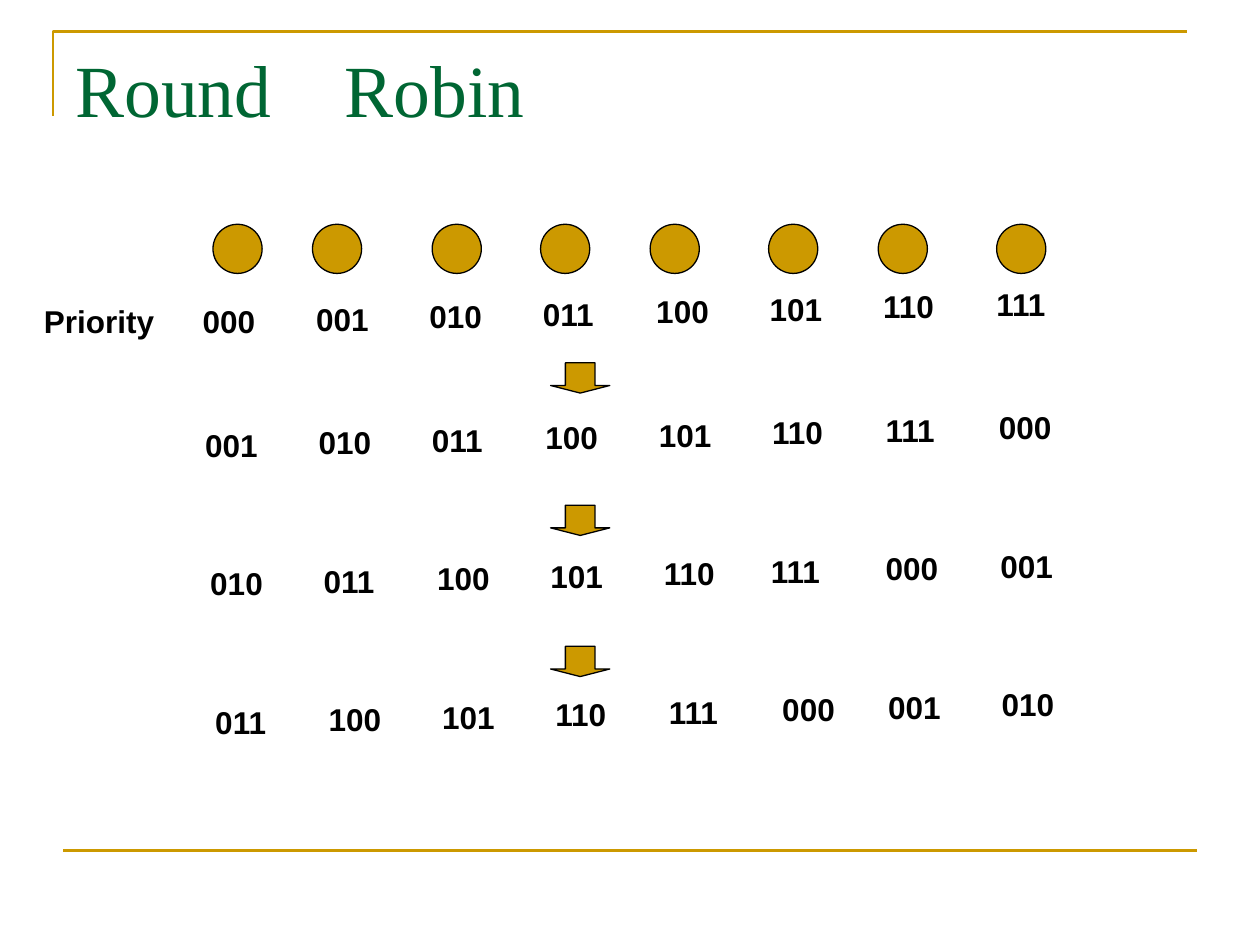
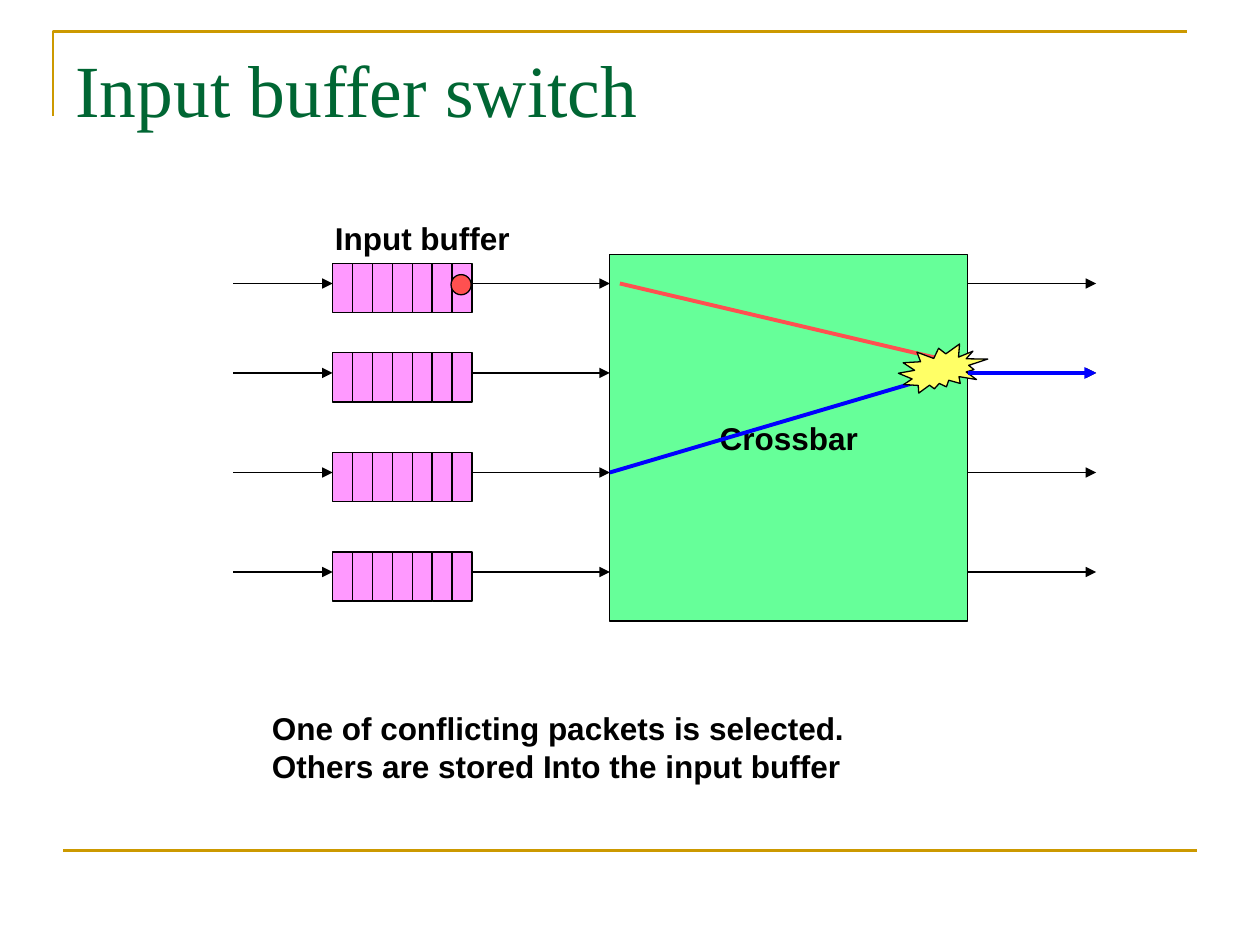
from dataclasses import dataclass

from lxml import etree
from pptx import Presentation
from pptx.dml.color import RGBColor
from pptx.enum.shapes import MSO_CONNECTOR, MSO_SHAPE
from pptx.enum.text import MSO_ANCHOR, MSO_AUTO_SIZE, PP_ALIGN
from pptx.oxml.ns import qn
from pptx.util import Inches, Pt

STRAIGHT = MSO_CONNECTOR.STRAIGHT
RECTANGLE = MSO_SHAPE.RECTANGLE
OVAL = MSO_SHAPE.OVAL
DOWN_ARROW = MSO_SHAPE.DOWN_ARROW
EXPLOSION = MSO_SHAPE.EXPLOSION2
TOP = MSO_ANCHOR.TOP
MIDDLE = MSO_ANCHOR.MIDDLE
CENTER = PP_ALIGN.CENTER
FIT_SHAPE = MSO_AUTO_SIZE.SHAPE_TO_FIT_TEXT


@dataclass(frozen=True)
class Theme:
    gold: str = "CC9900"
    title: str = "006633"
    ink: str = "000000"
    crossbar: str = "66FF99"
    buffer: str = "FF99FF"
    red: str = "FF5050"
    blue: str = "0000FF"
    burst: str = "FFFF66"
    title_font: str = "Times New Roman"
    body_font: str = "Arial"
    title_size: float = 42
    body_size: float = 18
    thin: float = 0.75
    rule: float = 1.5
    thick: float = 2.25


THEME = Theme()

NODE_LEFTS = [1.69, 2.48, 3.43, 4.29, 5.16, 6.1, 6.97, 7.91]
LABEL_PITCH = 0.9
LABEL_RISE = 0.02
PRIORITY_ROWS = [
    (1.51, 2.35, {}),
    (1.53, 3.33, {}),
    (1.57, 4.43, {5: -0.05, 6: -0.04, 7: -0.03}),
    (1.61, 5.53, {6: -0.06, 7: -0.06}),
]
ARROW_TOPS = [2.88, 4.01, 5.13]

LANES = [2.25, 2.96, 3.75, 4.54]
CELL_COUNT = 7
CELL_WIDTH = 0.158
CELL_HEIGHT = 0.39
BUFFER_LEFT = 2.64
BUFFER_RIGHT = 3.74
CROSSBAR_LEFT = 4.84
CROSSBAR_RIGHT = 7.68
INPUT_START = 1.85
OUTPUT_END = 8.7


def color(value):
    return RGBColor.from_string(value)


def set_font(paragraphs, name, size, ink, bold=False):
    for para in paragraphs:
        para.font.name = name
        para.font.size = Pt(size)
        para.font.color.rgb = color(ink)
        para.font.bold = bold


def add_line(page, start, end, ink=THEME.ink, width=THEME.thin, arrow=True):
    line = page.shapes.add_connector(STRAIGHT, *map(Inches, start + end))
    line.line.color.rgb = color(ink)
    line.line.width = Pt(width)
    if arrow:
        tail = etree.SubElement(line.line._get_or_add_ln(), qn("a:tailEnd"))
        tail.set("type", "triangle")
    etree.SubElement(line._element.spPr, qn("a:effectLst"))


def add_figure(page, kind, left, top, width, height, fill):
    figure = page.shapes.add_shape(kind, *map(Inches, (left, top, width, height)))
    figure.shadow.inherit = False
    figure.fill.solid()
    figure.fill.fore_color.rgb = color(fill)
    figure.line.color.rgb = color(THEME.ink)
    figure.line.width = Pt(THEME.thin)
    return figure


def add_label(page, text, left, top, width, height=0.4):
    box = page.shapes.add_textbox(*map(Inches, (left, top, width, height)))
    frame = box.text_frame
    frame.text = text
    frame.word_wrap = False
    frame.auto_size = FIT_SHAPE
    set_font(frame.paragraphs, THEME.body_font, THEME.body_size, THEME.ink, True)


def add_page(deck, title):
    page = deck.slides.add_slide(deck.slide_layouts[6])
    builder = page.shapes.build_freeform(Inches(0.42), Inches(0.92))
    corner = [(Inches(0.42), Inches(0.25)), (Inches(9.42), Inches(0.25))]
    builder.add_line_segments(corner, close=False)
    bracket = builder.convert_to_shape()
    bracket.shadow.inherit = False
    bracket.fill.background()
    bracket.line.color.rgb = color(THEME.gold)
    bracket.line.width = Pt(THEME.rule)
    add_line(page, (0.5, 6.75), (9.5, 6.75), THEME.gold, THEME.rule, arrow=False)

    box = page.shapes.add_textbox(Inches(0.5), Inches(0.3), Inches(9), Inches(1.25))
    frame = box.text_frame
    frame.word_wrap = True
    frame.vertical_anchor = TOP
    frame.text = title
    set_font(frame.paragraphs, THEME.title_font, THEME.title_size, THEME.title)
    return page


def add_buffer(page, lane):
    for cell in range(CELL_COUNT):
        left = BUFFER_LEFT + cell * CELL_WIDTH
        add_figure(page, RECTANGLE, left, lane - 0.16, CELL_WIDTH, CELL_HEIGHT, THEME.buffer)


def build_round_robin(deck):
    page = add_page(deck, "Round　Robin")
    for left in NODE_LEFTS:
        add_figure(page, OVAL, left, 1.78, 0.39, 0.39, THEME.gold)
    add_label(page, "Priority", 0.25, 2.35, 1.08)
    count = len(NODE_LEFTS)
    for shift, (row_left, row_top, nudges) in enumerate(PRIORITY_ROWS):
        for column in range(count):
            left = row_left + column * LABEL_PITCH + nudges.get(column, 0)
            top = row_top - column * LABEL_RISE
            add_label(page, f"{(column + shift) % count:03b}", left, top, 0.62)
    for top in ARROW_TOPS:
        arrow = add_figure(page, DOWN_ARROW, 4.37, top, 0.47, 0.24, THEME.gold)
        arrow.adjustments[1] = 0.25


def build_input_buffer_switch(deck):
    page = add_page(deck, "Input buffer switch")
    crossbar = add_figure(page, RECTANGLE, CROSSBAR_LEFT, 2.02,
                          CROSSBAR_RIGHT - CROSSBAR_LEFT, 2.91, THEME.crossbar)
    frame = crossbar.text_frame
    frame.text = "Crossbar"
    frame.word_wrap = False
    frame.vertical_anchor = MIDDLE
    frame.paragraphs[0].alignment = CENTER
    set_font(frame.paragraphs, THEME.body_font, THEME.body_size, THEME.ink, True)

    segments = [(INPUT_START, BUFFER_LEFT), (BUFFER_RIGHT, CROSSBAR_LEFT),
                (CROSSBAR_RIGHT, OUTPUT_END)]
    for lane in LANES:
        add_buffer(page, lane)
        for start, end in segments:
            add_line(page, (start, lane), (end, lane))
    add_label(page, "Input buffer", 2.56, 1.69, 1.59)

    add_line(page, (4.92, LANES[0]), (7.6, 2.88), THEME.red, THEME.thick)
    add_line(page, (CROSSBAR_LEFT, LANES[2]), (7.52, LANES[1]), THEME.blue, THEME.thick)
    add_figure(page, EXPLOSION, 7.13, 2.73, 0.71, 0.39, THEME.burst)
    add_figure(page, OVAL, 3.58, 2.18, 0.16, 0.16, THEME.red)
    add_line(page, (CROSSBAR_RIGHT, LANES[1]), (OUTPUT_END, LANES[1]), THEME.blue, THEME.thick)
    add_label(page, "One of conflicting packets is selected.\n"
              "Others are stored Into the input buffer", 2.06, 5.58, 4.74, 0.7)


def main():
    deck = Presentation()
    deck.slide_width = Inches(10)
    deck.slide_height = Inches(7.5)
    build_round_robin(deck)
    build_input_buffer_switch(deck)
    deck.save("out.pptx")


if __name__ == "__main__":
    main()
